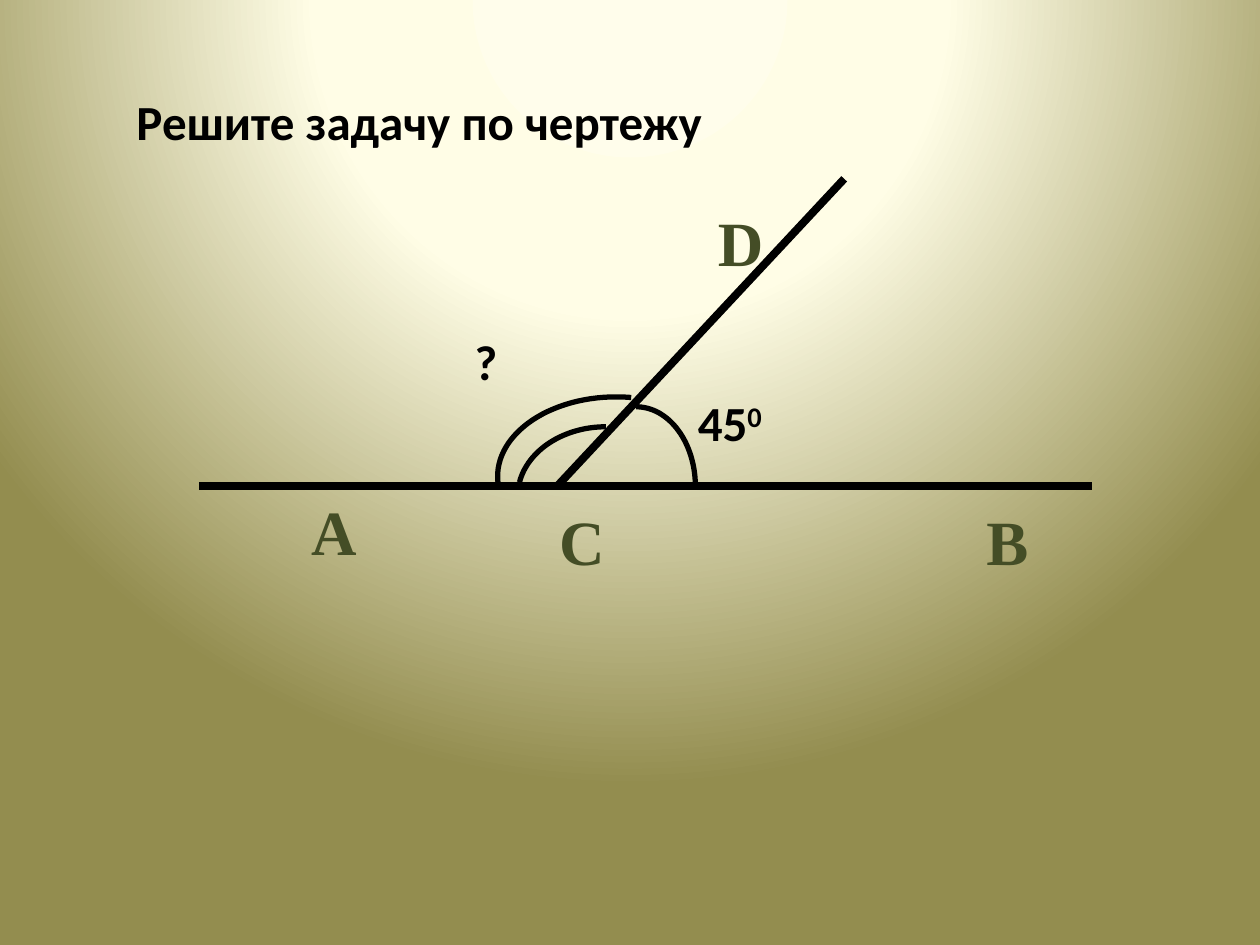
from dataclasses import dataclass
from math import cos, radians, sin

from lxml.etree import SubElement
from pptx import Presentation
from pptx.dml.color import RGBColor
from pptx.enum.shapes import MSO_CONNECTOR
from pptx.enum.text import MSO_ANCHOR, PP_ALIGN
from pptx.oxml import parse_xml
from pptx.oxml.ns import nsdecls, qn
from pptx.slide import Slide
from pptx.util import Pt

BLACK = "000000"
OLIVE = "444D26"
GRADIENT_STOPS = [(0, "FFFDEB"), (40, "FFFDE6"), (100, "938D4F")]
ARC_STEPS = 32


@dataclass
class Line:
    start: tuple[float, float]
    end: tuple[float, float]


@dataclass
class Arc:
    """Part of an ellipse, drawn clockwise; angles in degrees from the right."""
    center: tuple[float, float]
    radii: tuple[float, float]
    start_angle: float
    end_angle: float


@dataclass
class Caption:
    text: str
    left: float
    top: float
    width: float
    superscript: str = ""


@dataclass
class PointName:
    letter: str
    left: float
    top: float


RAYS = [
    Line((318.2, 278), (482.4, 102.2)),
    Line((113.8, 277.8), (624.2, 277.8)),
]
ARCS = [
    Arc((363.6, 277.9), (33.8, 45.4), 270, 360),
    Arc((346.3, 283.5), (50.4, 39.6), 191.5, 270),
    Arc((352.1, 272.2), (67.7, 45.4), 172.7, 277.3),
]
CAPTIONS = [
    Caption("Решите задачу по чертежу", 70.9, 49, 436.3),
    Caption("45", 391.7, 221, 56.9, superscript="0"),
    Caption("?", 264.2, 185.8, 56.9),
]
POINT_NAMES = [
    PointName("А", 170.8, 277.8),
    PointName("D", 403.2, 113),
    PointName("С", 312.5, 283.5),
    PointName("В", 556.6, 283.5),
]


def color(value: str) -> RGBColor:
    return RGBColor.from_string(value)


def set_background(slide: Slide) -> None:
    stops = "".join(
        f'<a:gs pos="{position * 1000}"><a:srgbClr val="{value}"/></a:gs>'
        for position, value in GRADIENT_STOPS
    )
    background = parse_xml(
        f'<p:bg {nsdecls("p", "a")}><p:bgPr><a:gradFill rotWithShape="1">'
        f'<a:gsLst>{stops}</a:gsLst><a:path path="circle">'
        '<a:fillToRect l="100000" t="-60000" r="100000" b="200000"/>'
        '</a:path></a:gradFill><a:effectLst/></p:bgPr></p:bg>'
    )
    slide.element.cSld.insert(0, background)


def add_line(slide: Slide, line: Line) -> None:
    connector = slide.shapes.add_connector(
        MSO_CONNECTOR.STRAIGHT, *(Pt(value) for value in line.start + line.end)
    )
    connector.line.color.rgb = color(BLACK)
    connector.line.width = Pt(4.5)
    SubElement(connector.element.spPr, qn("a:effectLst"))


def add_arc(slide: Slide, arc: Arc) -> None:
    sweep = arc.end_angle - arc.start_angle
    angles = [
        radians(arc.start_angle + sweep * step / ARC_STEPS)
        for step in range(ARC_STEPS + 1)
    ]
    points = [
        (Pt(arc.center[0] + arc.radii[0] * cos(angle)),
         Pt(arc.center[1] + arc.radii[1] * sin(angle)))
        for angle in angles
    ]
    builder = slide.shapes.build_freeform(*points[0])
    builder.add_line_segments(points[1:], close=False)
    shape = builder.convert_to_shape()
    shape.fill.background()
    shape.line.color.rgb = color(BLACK)
    shape.line.width = Pt(3)
    shape.shadow.inherit = False


def add_text_box(slide: Slide, left: float, top: float, width: float):
    text_box = slide.shapes.add_textbox(Pt(left), Pt(top), Pt(width), Pt(41))
    text_box.text_frame.vertical_anchor = MSO_ANCHOR.TOP
    return text_box.text_frame


def add_run(paragraph, text: str, name: str, size: float, value: str):
    run = paragraph.add_run()
    run.text = text
    run.font.name = name
    run.font.size = Pt(size)
    run.font.bold = True
    run.font.color.rgb = color(value)
    return run


def add_caption(slide: Slide, caption: Caption) -> None:
    frame = add_text_box(slide, caption.left, caption.top, caption.width)
    frame.word_wrap = True
    paragraph = frame.paragraphs[0]
    add_run(paragraph, caption.text, "Calibri", 28, BLACK)
    if caption.superscript:
        run = add_run(paragraph, caption.superscript, "Calibri", 28, BLACK)
        run.font._element.set("baseline", "30000")


def add_point_name(slide: Slide, point: PointName) -> None:
    frame = add_text_box(slide, point.left, point.top, 25.9)
    frame.word_wrap = False
    paragraph = frame.paragraphs[0]
    paragraph.alignment = PP_ALIGN.CENTER
    add_run(paragraph, point.letter, "Times New Roman", 36, OLIVE)


def main() -> None:
    presentation = Presentation()
    presentation.slide_width = Pt(720)
    presentation.slide_height = Pt(540)
    slide = presentation.slides.add_slide(presentation.slide_layouts[6])
    set_background(slide)

    # Angle drawing
    for line in RAYS:
        add_line(slide, line)
    for arc in ARCS:
        add_arc(slide, arc)

    # Task, angle values and point names
    for caption in CAPTIONS:
        add_caption(slide, caption)
    for point in POINT_NAMES:
        add_point_name(slide, point)

    presentation.save("out.pptx")


if __name__ == "__main__":
    main()
